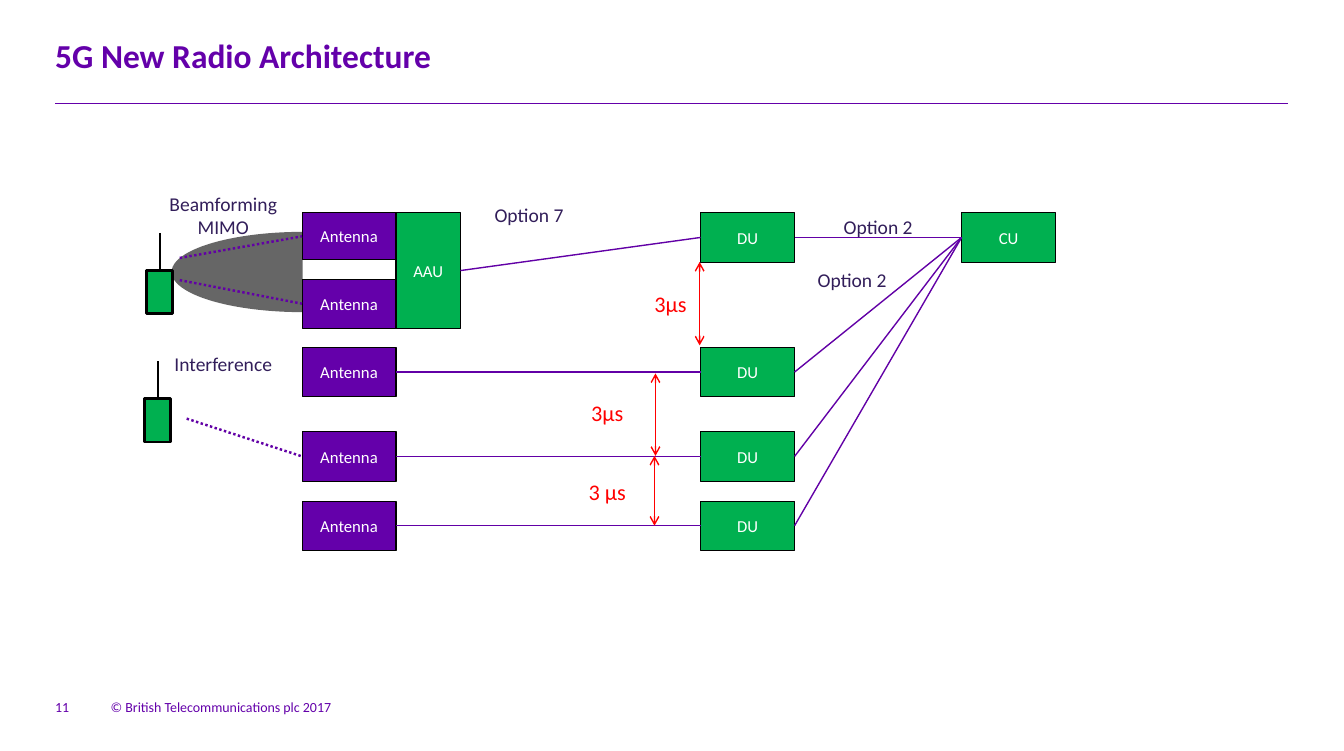
import pptx
import pptx.util
import pptx.dml.color
import pptx.enum.dml
import pptx.enum.shapes
import pptx.enum.text
import pptx.oxml.ns
import lxml.etree

Pt = pptx.util.Pt
RGBColor = pptx.dml.color.RGBColor
SHAPE = pptx.enum.shapes.MSO_SHAPE
ALIGN = pptx.enum.text.PP_ALIGN
ANCHOR = pptx.enum.text.MSO_ANCHOR

PURPLE = RGBColor(0x64, 0x00, 0xAA)
LINK_PURPLE = RGBColor(0x62, 0x00, 0xA6)
INDIGO = RGBColor(0x32, 0x1E, 0x5A)
GREEN = RGBColor(0x00, 0xB0, 0x50)
RED = RGBColor(0xFF, 0x00, 0x00)
GREY = RGBColor(0x66, 0x66, 0x66)
BLACK = RGBColor(0x00, 0x00, 0x00)
WHITE = RGBColor(0xFF, 0xFF, 0xFF)

UNIT_WIDTH, UNIT_HEIGHT = 67.4, 35.4
ROW_TOPS = [18.7, 115.2, 175.7, 225.4]
LEFT_SIDE, RIGHT_SIDE = 1, 3


def write(frame, lines, size, color, align, anchor):
    frame.vertical_anchor = anchor
    frame.text = "\n".join(lines)
    for paragraph in frame.paragraphs:
        paragraph.alignment = align
        paragraph.font.name = "Calibri"
        paragraph.font.size = Pt(size)
        paragraph.font.color.rgb = color


def add_label(slide, box, lines, size, color, wrap=False):
    label = slide.shapes.add_textbox(*map(Pt, box))
    write(label.text_frame, lines, size, color, ALIGN.CENTER, ANCHOR.TOP)
    label.text_frame.word_wrap = wrap


def add_plain_text(slide, box, text, size, anchor):
    frame = slide.shapes.add_textbox(*map(Pt, box)).text_frame
    frame.margin_left = frame.margin_right = frame.margin_top = frame.margin_bottom = 0
    write(frame, [text], size, PURPLE, ALIGN.LEFT, anchor)
    frame.word_wrap = True
    return frame


def add_block(slide, box, fill, outline=0.75, text=None, kind=SHAPE.RECTANGLE):
    block = slide.shapes.add_shape(kind, *map(Pt, box))
    block.shadow.inherit = False
    block.fill.solid()
    block.fill.fore_color.rgb = fill
    if outline:
        block.line.color.rgb = BLACK
        block.line.width = Pt(outline)
    else:
        block.line.fill.background()
    if text:
        write(block.text_frame, [text], 12, WHITE, ALIGN.CENTER, ANCHOR.MIDDLE)
    return block


def add_line(slide, start, end, color, width):
    line = slide.shapes.add_connector(
        pptx.enum.shapes.MSO_CONNECTOR.STRAIGHT, *map(Pt, (*start, *end)))
    line.line.color.rgb = color
    line.line.width = Pt(width)
    lxml.etree.SubElement(line._element.spPr, pptx.oxml.ns.qn("a:effectLst"))
    return line


def link(slide, source, target):
    line = add_line(slide, (0, 0), (0, 0), LINK_PURPLE, 1)
    line.begin_connect(source, RIGHT_SIDE)
    line.end_connect(target, LEFT_SIDE)


def draw_header(slide, left, top, width):
    title = add_plain_text(slide, (left, top, width, 33.8),
                           "5G New Radio Architecture", 24, ANCHOR.TOP)
    title.paragraphs[0].font.bold = True
    rule = top + 48.5
    add_line(slide, (left, rule), (left + width, rule), PURPLE, 0.25)


def draw_footer(slide, left, top):
    add_plain_text(slide, (left, top, 28, 22.3), "11", 10, ANCHOR.BOTTOM)
    add_plain_text(slide, (left + 39.8, top + 2, 170, 21),
                   "© British Telecommunications plc 2017", 10, ANCHOR.BOTTOM)


def draw_antennas(slide, left, top):
    beam = add_block(slide, (left - 93.6, top + 32.4, 188.6, 57.6), GREY,
                     outline=0, kind=SHAPE.CHORD)
    beam.adjustments[0], beam.adjustments[1] = 54.774, 162
    tops = [ROW_TOPS[0], 66.2, *ROW_TOPS[1:]]
    antennas = [
        add_block(slide, (left, top + y, UNIT_WIDTH, 33.8 if y == tops[0] else UNIT_HEIGHT),
                  PURPLE, text="Antenna")
        for y in tops]
    aau = add_block(slide, (left + UNIT_WIDTH, top + ROW_TOPS[0], 46.2, 82.9),
                    GREEN, text="AAU")
    return antennas, aau


def draw_handsets(slide, left, top, antennas):
    for x, y in [(1.4, 59.8), (0, 151.9)]:
        add_block(slide, (left + x, top + y, 18.7, 31.2), GREEN, outline=2)
        mast = left + x + 9.4
        add_line(slide, (mast, top + y - 26.6), (mast, top + y), BLACK, 1.5)
    for x, y, antenna in [(25.2, 51.1, antennas[0]), (25.2, 67, antennas[1]),
                          (30.2, 166.3, antennas[3])]:
        signal = add_line(slide, (left + x, top + y), (left, top), LINK_PURPLE, 1.75)
        signal.end_connect(antenna, LEFT_SIDE)
        signal.line.dash_style = pptx.enum.dml.MSO_LINE.ROUND_DOT
    add_label(slide, (left, top, 113, 41), ["Beamforming", "MIMO"], 14, INDIGO, wrap=True)
    add_label(slide, (left, top + 115.2, 113, 24.5), ["Interference"], 14, INDIGO, wrap=True)


def draw_baseband(slide, left, top, radios):
    cu = add_block(slide, (left + 187.2, top + ROW_TOPS[0], UNIT_WIDTH, UNIT_HEIGHT),
                   GREEN, text="CU")
    for y, radio in zip(ROW_TOPS, radios):
        du = add_block(slide, (left, top + y, UNIT_WIDTH, UNIT_HEIGHT), GREEN, text="DU")
        link(slide, radio, du)
        link(slide, du, cu)
    for x, y, option in [(-159.1, 7.9, "Option 7"), (91.4, 16.6, "Option 2"),
                         (72.7, 54.7, "Option 2")]:
        add_label(slide, (left + x, top + y, 72, 24.5), [option], 14, INDIGO)


def draw_delays(slide, left, top):
    for x, start, end, label_x, label_y, delay in [
            (-0.7, 54, 113.8, -21.6, 70.6, "3µs"),
            (-32.4, 133.9, 193, -67, 149, "3µs"),
            (-33.1, 193, 243.1, -67, 205.2, "3 µs")]:
        arrow = add_line(slide, (left + x, top + start), (left + x, top + end), RED, 1)
        for tip in ("a:headEnd", "a:tailEnd"):
            lxml.etree.SubElement(arrow.line._get_or_add_ln(),
                                  pptx.oxml.ns.qn(tip), type="arrow")
        add_label(slide, (left + label_x - 20.9, top + label_y, 41.8, 26.6), [delay], 16, RED)


def draw_architecture(slide, left, top):
    antennas, aau = draw_antennas(slide, left + 113, top)
    draw_baseband(slide, left + 398.9, top, [aau, *antennas[2:]])
    draw_delays(slide, left + 398.9, top)
    draw_handsets(slide, left, top, antennas)


def main():
    deck = pptx.Presentation()
    deck.slide_width, deck.slide_height = Pt(964.08), Pt(538.56)
    slide = deck.slides.add_slide(deck.slide_layouts[6])
    draw_header(slide, 39.6, 25.2, 884.2)
    draw_architecture(slide, 103.7, 133.9)
    draw_footer(slide, 39.6, 490.3)
    deck.save("out.pptx")


if __name__ == "__main__":
    main()
